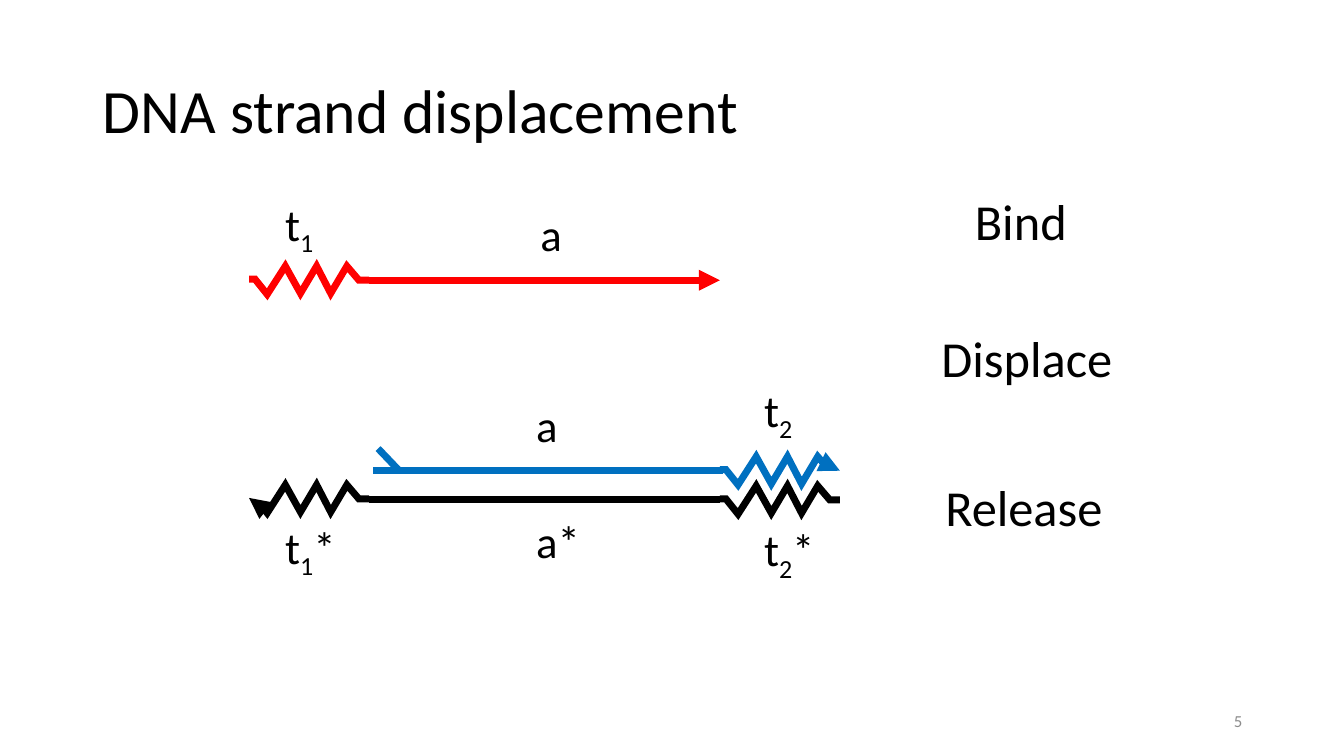
from lxml import etree
from pptx import Presentation
from pptx.dml.color import RGBColor
from pptx.enum.shapes import MSO_CONNECTOR
from pptx.enum.text import MSO_ANCHOR, MSO_AUTO_SIZE, PP_ALIGN
from pptx.oxml.ns import qn
from pptx.util import Inches, Pt

LINE = MSO_CONNECTOR.STRAIGHT
MID = MSO_ANCHOR.MIDDLE
FIT, FIXED = MSO_AUTO_SIZE.SHAPE_TO_FIT_TEXT, MSO_AUTO_SIZE.NONE
LEFT, CENTER, RIGHT = PP_ALIGN.LEFT, PP_ALIGN.CENTER, PP_ALIGN.RIGHT
BLACK, RED, BLUE, GRAY = "000000", "FF0000", "0070C0", "8C8C8C"


def ink(shape, tone, ends=()):
    shape.line.color.rgb = RGBColor.from_string(tone)
    shape.line.width = Pt(5)
    stroke = shape.line._get_or_add_ln()
    etree.SubElement(stroke, qn("a:miter"), lim="800000")
    for end in ends:
        etree.SubElement(stroke, qn(f"a:{end}End"), type="triangle")
    if shape._element.spPr.find(qn("a:effectLst")) is None:
        etree.SubElement(shape._element.spPr, qn("a:effectLst"))


def write(shape, parts, size, align=LEFT, tone=BLACK):
    para = shape.text_frame.paragraphs[0]
    para.alignment = align
    for part in parts:
        run = para.add_run()
        run.text = part
        run.font.name = "Calibri"
        run.font.size = Pt(size)
        run.font.color.rgb = RGBColor.from_string(tone)
        if len(parts) > 1 and part.isdigit():
            run._r.get_or_add_rPr().set("baseline", "-25000")


prs = Presentation()
prs.slide_width, prs.slide_height = Inches(13.33), Inches(7.5)
slide = prs.slides.add_slide(prs.slide_layouts[5])
shapes = slide.shapes

title = shapes.title
title.left, title.top = Inches(0.92), Inches(0.4)
title.width, title.height = Inches(11.5), Inches(1.45)
title.text_frame.vertical_anchor = MID
title.text_frame.auto_size = FIXED
title.text_frame.paragraphs[0].line_spacing = 0.9
write(title, ["DNA strand displacement"], 44)

for step, x, y in [("Bind", 9, 1.84), ("Displace", 9.06, 3.2), ("Release", 9.03, 4.67)]:
    box = shapes.add_textbox(Inches(x), Inches(y), Inches(2.25), Inches(0.71))
    box.text_frame.word_wrap = True
    box.text_frame.auto_size = FIT
    write(box, [step], 36, CENTER)

start, near, far = 2.47, 3.66, 7.14
zigzag = [(0, 0.13), (0.06, 0.13), (0.18, 0.28), (0.36, 0), (0.51, 0.27),
          (0.67, 0), (0.81, 0.27), (0.97, 0), (1.09, 0.14), (1.19, 0.14)]
toeholds = [
    (start, 2.64, RED, []),
    (far, 4.53, BLUE, ["tail"]),
    (start, 4.81, BLACK, ["head"]),
    (far, 4.82, BLACK, []),
]
for x, y, tone, ends in toeholds:
    points = [(Inches(x + dx), Inches(y + dy)) for dx, dy in zigzag]
    path = shapes.build_freeform(*points[0])
    path.add_line_segments(points[1:], close=False)
    strand = path.convert_to_shape()
    strand.fill.background()
    strand.shadow.inherit = False
    ink(strand, tone, ends)

strands = [
    (near, 4.96, far, 4.96, BLACK, []),
    (near, 2.78, far, 2.78, RED, ["tail"]),
    (3.7, 4.67, 7.17, 4.67, BLUE, []),
    (3.96, 4.67, 3.75, 4.45, BLUE, []),
]
for x, y, to_x, to_y, tone, ends in strands:
    line = shapes.add_connector(LINE, Inches(x), Inches(y), Inches(to_x), Inches(to_y))
    ink(line, tone, ends)

labels = [
    (["t", "1"], 2.73, 1.9, 0.51),
    (["a"], 5.26, 2, 0.42),
    (["a"], 5.22, 3.9, 0.42),
    (["t", "2"], 7.48, 3.75, 0.51),
    (["t", "1", "*"], 2.73, 5.11, 0.73),
    (["a*"], 5.22, 5.05, 0.64),
    (["t", "2", "*"], 7.48, 5.13, 0.73),
]
for parts, x, y, wide in labels:
    box = shapes.add_textbox(Inches(x), Inches(y), Inches(wide), Inches(0.64))
    box.text_frame.word_wrap = False
    box.text_frame.auto_size = FIT
    write(box, parts, 32)

page = shapes.add_textbox(Inches(9.42), Inches(6.95), Inches(3), Inches(0.4))
page.text_frame.word_wrap = True
page.text_frame.vertical_anchor = MID
write(page, ["5"], 12, RIGHT, GRAY)

prs.save("out.pptx")
